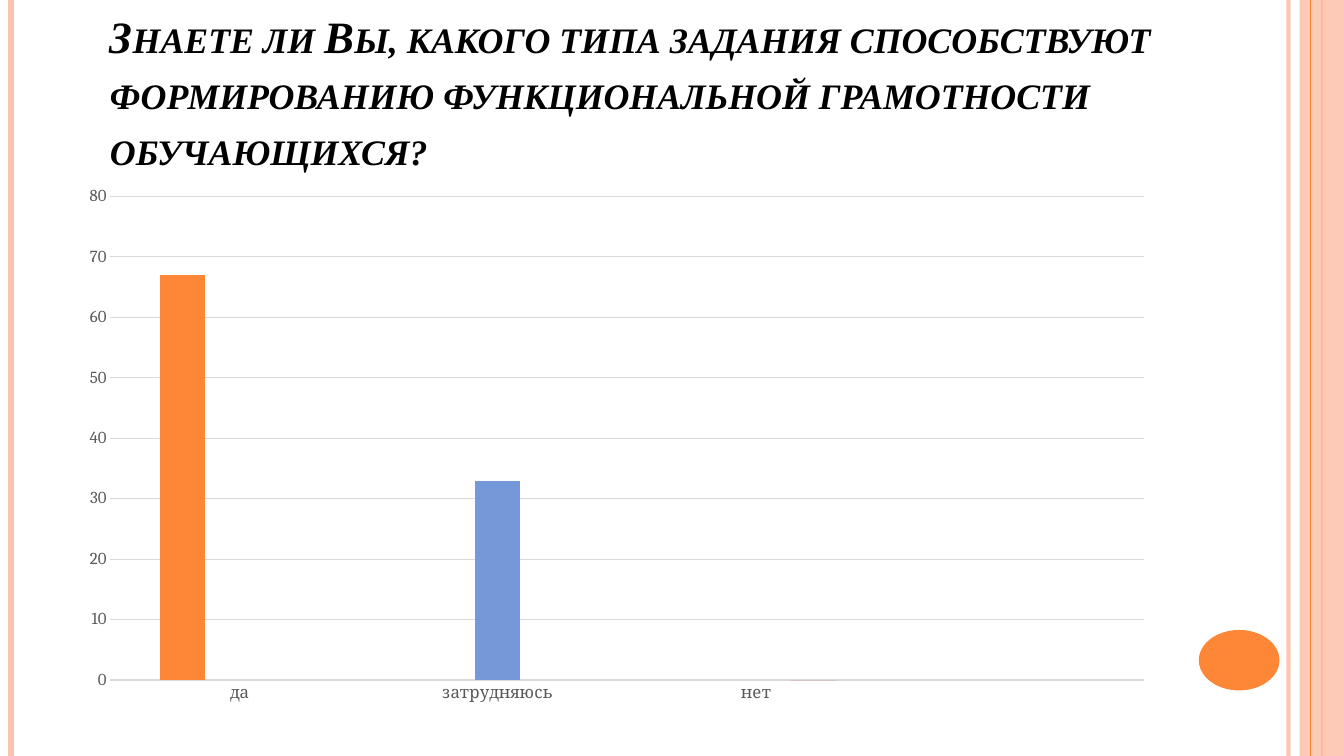
from lxml import etree
from pptx import Presentation
from pptx.chart.data import CategoryChartData
from pptx.dml.color import RGBColor
from pptx.enum.chart import XL_CHART_TYPE, XL_TICK_MARK
from pptx.enum.shapes import MSO_CONNECTOR, MSO_SHAPE
from pptx.enum.text import MSO_ANCHOR, MSO_AUTO_SIZE, PP_ALIGN
from pptx.oxml.ns import qn
from pptx.util import Inches, Pt

COLUMN = XL_CHART_TYPE.COLUMN_CLUSTERED
NO_TICK = XL_TICK_MARK.NONE
STRAIGHT = MSO_CONNECTOR.STRAIGHT
RECT, OVAL = MSO_SHAPE.RECTANGLE, MSO_SHAPE.OVAL

PINK = RGBColor(0xFE, 0xC3, 0xAE)
ORANGE = RGBColor(0xFE, 0x86, 0x37)
BLUE = RGBColor(0x75, 0x98, 0xD9)
RED = RGBColor(0xB3, 0x2C, 0x16)
BLACK = RGBColor(0, 0, 0)
GRAY = RGBColor(0x59, 0x59, 0x59)
PALE = RGBColor(0xD9, 0xD9, 0xD9)


def set_alpha(shape, percent):
    color = next(shape._element.spPr.iter(qn("a:srgbClr")))
    etree.SubElement(color, qn("a:alpha")).set("val", str(percent * 1000))


def add_stripe(x, color, width):
    line = slide.shapes.add_connector(
        STRAIGHT, Inches(x), 0, Inches(x), Inches(7.5))
    line.line.color.rgb = color
    line.line.width = Pt(width)
    etree.SubElement(line._element.spPr, qn("a:effectLst"))
    return line


prs = Presentation()
prs.slide_width, prs.slide_height = Inches(13.33), Inches(7.5)
slide = prs.slides.add_slide(prs.slide_layouts[5])

# Side stripes and ellipse
set_alpha(add_stripe(12.78, PINK, 3), 93)
add_stripe(0.11, PINK, 4.5)
add_stripe(13.11, ORANGE, 1.5)
for kind, color, box in [(RECT, PINK, (12.89, 0, 0.44, 7.5)),
                         (OVAL, ORANGE, (11.89, 6.25, 0.8, 0.6))]:
    shape = slide.shapes.add_shape(kind, *map(Inches, box))
    shape.shadow.inherit = False
    shape.fill.solid()
    shape.fill.fore_color.rgb = color
    shape.line.fill.background()
    if kind == RECT:
        set_alpha(shape, 87)
        add_stripe(13, ORANGE, 0.75)

# Title
title = slide.shapes.title
title.left, title.top = Inches(0.99), Inches(0.53)
title.width, title.height = Inches(10.89), Inches(1.25)
frame = title.text_frame
frame.word_wrap = True
frame.auto_size = MSO_AUTO_SIZE.NONE
frame.vertical_anchor = MSO_ANCHOR.BOTTOM
para = frame.paragraphs[0]
para.alignment = PP_ALIGN.LEFT
para.line_spacing = 1.04
run = para.add_run()
run.text = ("Знаете ли Вы, какого типа задания способствуют формированию "
            "функциональной грамотности обучающихся?")
run.font.name, run.font.size = "Times New Roman", Pt(32)
run.font.bold = run.font.italic = True
run.font.color.rgb = BLACK
run._r.get_or_add_rPr().set("cap", "small")

# Chart: one series per answer, with an unnamed fourth category
data = CategoryChartData()
data.categories = ["да", "затрудняюсь", "нет", ""]
for i, value in enumerate([67, 33, 0]):
    row = [None] * 4
    row[i] = value
    data.add_series(f"Series {i + 1}", row)
chart = slide.shapes.add_chart(
    COLUMN, Inches(0.67), Inches(1.75), Inches(10.89), Inches(5.33), data).chart
chart.has_legend = False
chart.has_title = False
chart.font.name, chart.font.size = "Cambria", Pt(10)
chart.font.color.rgb = BLACK

plot = chart.plots[0]
plot.gap_width, plot.overlap = 219, -27
plot.vary_by_categories = False
for series, color in zip(plot.series, [ORANGE, BLUE, RED]):
    series.format.fill.solid()
    series.format.fill.fore_color.rgb = color

cats, vals = chart.category_axis, chart.value_axis
for axis in (cats, vals):
    axis.major_tick_mark = axis.minor_tick_mark = NO_TICK
    font = axis.tick_labels.font
    font.name, font.size = "Cambria", Pt(12)
    font.color.rgb = GRAY
vals.minimum_scale, vals.maximum_scale, vals.major_unit = 0, 80, 10
vals.has_major_gridlines = True
vals.format.line.fill.background()
for line in (cats.format.line, vals.major_gridlines.format.line):
    line.color.rgb = PALE
    line.width = Pt(0.75)

prs.save("out.pptx")
